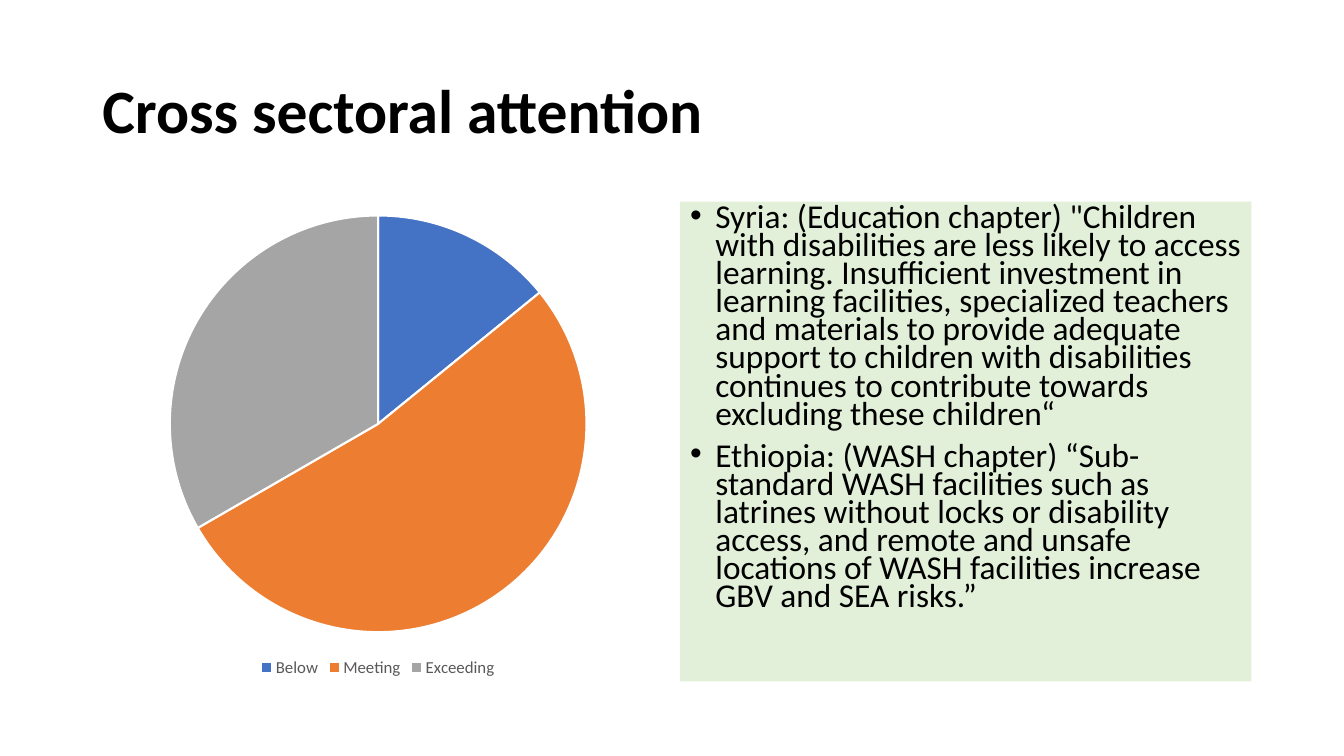
from dataclasses import dataclass

from lxml.etree import SubElement
from pptx import Presentation
from pptx.chart.data import CategoryChartData
from pptx.dml.color import RGBColor
from pptx.enum.chart import XL_CHART_TYPE, XL_LEGEND_POSITION
from pptx.enum.shapes import MSO_SHAPE
from pptx.enum.text import MSO_ANCHOR, PP_ALIGN
from pptx.oxml.ns import qn
from pptx.slide import Slide
from pptx.util import Cm, Pt

BLACK = RGBColor(0x00, 0x00, 0x00)
WHITE = RGBColor(0xFF, 0xFF, 0xFF)
LEGEND_GREY = RGBColor(0x59, 0x59, 0x59)
PALE_GREEN = RGBColor(0xE2, 0xF0, 0xD9)
RATING_COLORS = (
    RGBColor(0x44, 0x72, 0xC4),
    RGBColor(0xED, 0x7D, 0x31),
    RGBColor(0xA5, 0xA5, 0xA5),
)

RATINGS = {"Below": 14, "Meeting": 52, "Exceeding": 33}
QUOTES = (
    'Syria: (Education chapter) "Children with disabilities are less likely to '
    "access learning. Insufficient investment in learning facilities, specialized "
    "teachers and materials to provide adequate support to children with "
    "disabilities continues to contribute towards excluding these children“",
    "Ethiopia: (WASH chapter) “Sub-standard WASH facilities such as latrines "
    "without locks or disability access, and remote and unsafe locations of WASH "
    "facilities increase GBV and SEA risks.”",
)


@dataclass
class SlideBuilder:
    slide: Slide
    font_name: str = "Calibri"

    def style_font(self, font, size, color, bold=False):
        font.name = self.font_name
        font.size = Pt(size)
        font.bold = bold
        font.color.rgb = color

    def title(self, wording, left, top, width, height):
        frame = self.slide.shapes.add_textbox(left, top, width, height).text_frame
        frame.word_wrap = True
        frame.vertical_anchor = MSO_ANCHOR.MIDDLE
        heading = frame.paragraphs[0]
        heading.text = wording
        heading.line_spacing = 0.9
        self.style_font(heading.font, 44, BLACK, bold=True)

    def pie(self, ratings, left, top, width, height):
        chart_data = CategoryChartData()
        chart_data.categories = list(ratings)
        chart_data.add_series("Series 1", list(ratings.values()))
        chart = self.slide.shapes.add_chart(
            XL_CHART_TYPE.PIE, left, top, width, height, chart_data
        ).chart
        self.style_font(chart.font, 10, BLACK)
        chart.has_title = False
        chart.has_legend = True
        chart.legend.position = XL_LEGEND_POSITION.BOTTOM
        chart.legend.include_in_layout = False
        self.style_font(chart.legend.font, 12, LEGEND_GREY)
        plot = chart.plots[0]
        plot.vary_by_categories = True
        for index, color in enumerate(RATING_COLORS):
            wedge = plot.series[0].points[index].format
            wedge.fill.solid()
            wedge.fill.fore_color.rgb = color
            wedge.line.color.rgb = WHITE
            wedge.line.width = Pt(1.5)

    def bullet_panel(self, quotes, left, top, width, height):
        panel = self.slide.shapes.add_shape(
            MSO_SHAPE.RECTANGLE, left, top, width, height
        )
        panel.shadow.inherit = False
        panel.fill.solid()
        panel.fill.fore_color.rgb = PALE_GREEN
        panel.line.fill.background()
        frame = panel.text_frame
        frame.word_wrap = True
        frame.vertical_anchor = MSO_ANCHOR.TOP
        frame.text = "\n".join(quotes)
        for quote in frame.paragraphs:
            quote.alignment = PP_ALIGN.LEFT
            quote.line_spacing = 0.7
            quote.space_before = Pt(10)
            self.style_font(quote.font, 23.8, BLACK)
            self.add_bullet(quote)

    def add_bullet(self, paragraph):
        properties = paragraph._p.get_or_add_pPr()
        indent = Cm(0.64)
        properties.set("marL", str(indent))
        properties.set("indent", str(-indent))
        bullet_font = SubElement(properties, qn("a:buFont"))
        bullet_font.set("typeface", "Arial")
        bullet = SubElement(properties, qn("a:buChar"))
        bullet.set("char", "•")
        properties.append(properties.find(qn("a:defRPr")))


def main():
    presentation = Presentation()
    presentation.slide_width = Cm(33.87)
    presentation.slide_height = Cm(19.05)
    blank_layout = presentation.slide_layouts[6]
    builder = SlideBuilder(presentation.slides.add_slide(blank_layout))

    margin = Cm(2.33)
    content_top = Cm(5.08)
    column_width, column_height = Cm(14.4), Cm(12.09)
    content_width = presentation.slide_width - 2 * margin
    panel_left = margin + content_width - column_width

    builder.title("Cross sectoral attention", margin, Cm(1.01), content_width, Cm(3.68))
    builder.pie(RATINGS, margin, content_top, column_width, column_height)
    builder.bullet_panel(QUOTES, panel_left, content_top, column_width, column_height)
    presentation.save("out.pptx")


if __name__ == "__main__":
    main()
